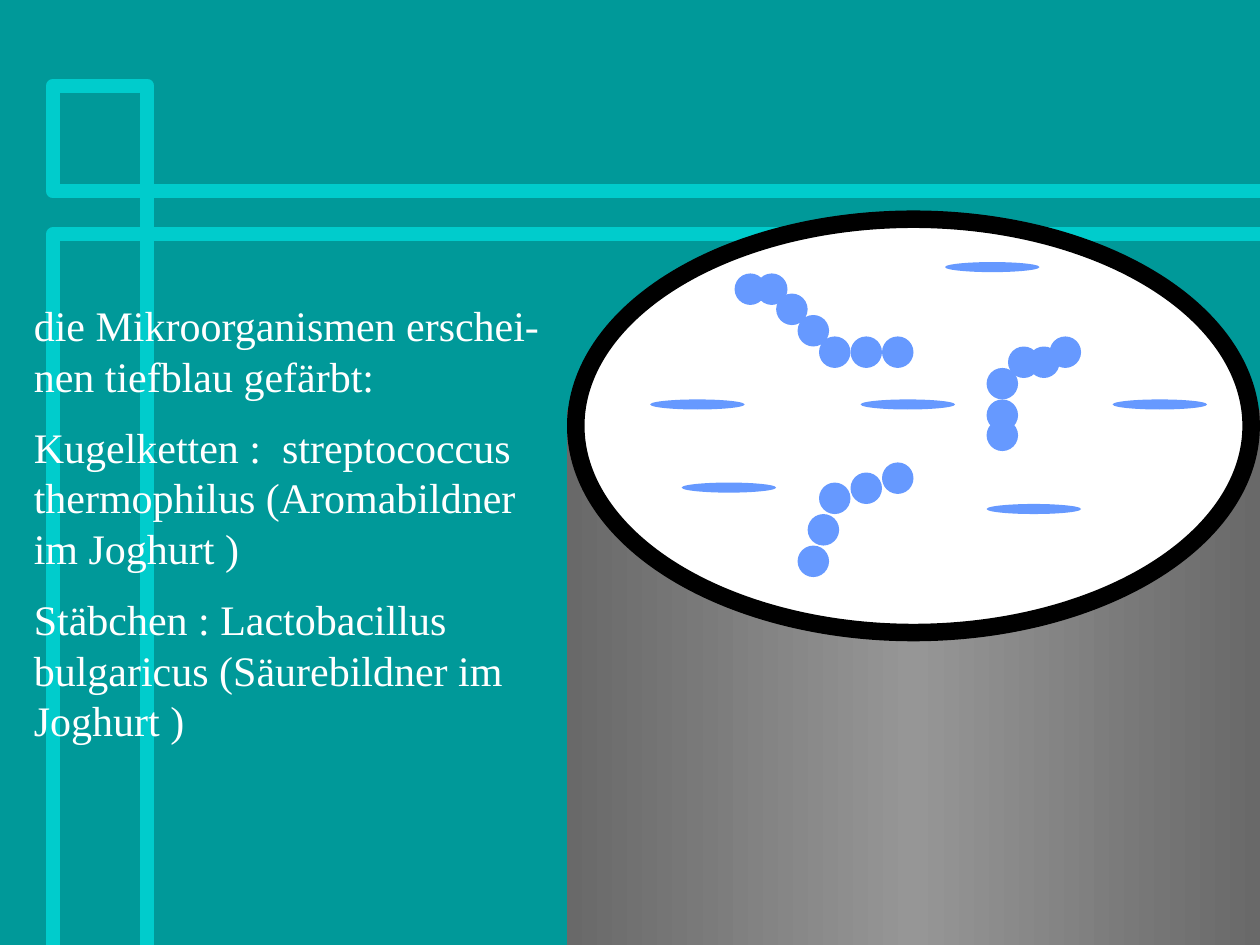
import copy

import pptx
import pptx.dml.color
import pptx.enum.shapes
import pptx.enum.text
import pptx.oxml
import pptx.util
from pptx.dml.color import RGBColor
from pptx.util import Inches

TEAL = RGBColor(0x00, 0x99, 0x99)
CYAN = RGBColor(0x00, 0xCC, 0xCC)
DARK_GREY = RGBColor(0x69, 0x69, 0x69)
LIGHT_GREY = RGBColor(0x96, 0x96, 0x96)
BLUE = RGBColor(0x66, 0x99, 0xFF)
WHITE = RGBColor(0xFF, 0xFF, 0xFF)
BLACK = RGBColor(0x00, 0x00, 0x00)

FRAME_LINES = [
    [(10, 1.86), (0.42, 1.86), (0.42, 7.5)],
    [(1.17, 7.5), (1.17, 0.68), (0.42, 0.68), (0.42, 1.52), (10, 1.52)],
]

# Left and top of each bacterium
COCCUS_CHAINS = [
    [(5.83, 2.17), (6, 2.17), (6.16, 2.33), (6.33, 2.5), (6.5, 2.67), (6.75, 2.67), (7, 2.67)],
    [(7.83, 3.33), (7.83, 3.17), (7.83, 2.92), (8, 2.75), (8.16, 2.75), (8.33, 2.67)],
    [(6.33, 4.33), (6.41, 4.08), (6.5, 3.83), (6.75, 3.75), (7, 3.67)],
]
RODS = [(5.16, 3.17), (7.5, 2.08), (7.83, 4), (5.41, 3.83), (6.83, 3.17), (8.83, 3.17)]

TEXT = [
    "die Mikroorganismen erschei-nen tiefblau gefärbt:",
    "Kugelketten :  streptococcus thermophilus (Aromabildner im Joghurt )",
    "Stäbchen : Lactobacillus bulgaricus (Säurebildner im Joghurt )",
]


def add_frame_line(page, points):
    start, *others = [(Inches(x), Inches(y)) for x, y in points]
    builder = page.shapes.build_freeform(*start)
    builder.add_line_segments(others, close=False)
    shape = builder.convert_to_shape()
    shape.shadow.inherit = False
    shape.fill.background()
    shape.line.color.rgb = CYAN
    shape.line.width = pptx.util.Pt(8)
    # Rounded corners
    line = shape.line._get_or_add_ln()
    line.append(pptx.oxml.parse_xml(
        '<a:round xmlns:a="http://schemas.openxmlformats.org/drawingml/2006/main"/>'))


def add_ellipse(shapes, left, top, width, height, color):
    shape = shapes.add_shape(pptx.enum.shapes.MSO_SHAPE.OVAL, Inches(left), Inches(top),
                             Inches(width), Inches(height))
    shape.shadow.inherit = False
    shape.fill.solid()
    shape.fill.fore_color.rgb = color
    shape.line.fill.background()
    return shape


def add_microscope_tube(page):
    tube = page.shapes.add_shape(pptx.enum.shapes.MSO_SHAPE.RECTANGLE, Inches(4.5), Inches(3.25),
                                 Inches(5.5), Inches(4.25))
    tube.shadow.inherit = False
    tube.line.fill.background()
    tube.fill.gradient()
    tube.fill.gradient_angle = 0
    # A third stop puts the light band in the middle
    stop_list = tube.fill._fill._gradFill.gsLst
    stop_list.insert(1, copy.deepcopy(stop_list[0]))
    colors = [DARK_GREY, LIGHT_GREY, DARK_GREY]
    for stop, position, color in zip(tube.fill.gradient_stops, (0, 0.5, 1), colors):
        stop.position = position
        stop.color.rgb = color

    lens = add_ellipse(page.shapes, 4.57, 1.74, 5.36, 3.28, WHITE)
    lens.line.color.rgb = BLACK
    lens.line.width = pptx.util.Pt(10)


def add_bacteria(page):
    group = page.shapes.add_group_shape()
    for chain in COCCUS_CHAINS:
        for left, top in chain:
            add_ellipse(group.shapes, left, top, 0.25, 0.25, BLUE)
    for left, top in RODS:
        add_ellipse(group.shapes, left, top, 0.75, 0.08, BLUE)


def add_description(page):
    box = page.shapes.add_textbox(Inches(0.17), Inches(2.33), Inches(4.25), Inches(3.69))
    frame = box.text_frame
    frame.word_wrap = True
    frame.auto_size = pptx.enum.text.MSO_AUTO_SIZE.SHAPE_TO_FIT_TEXT
    frame.text = "\n".join(TEXT)
    for para in frame.paragraphs:
        para.space_before = pptx.util.Pt(12)
        for span in para.runs:
            span.font.name = "Times New Roman"
            span.font.size = pptx.util.Pt(24)
            span.font.color.rgb = WHITE


def main():
    deck = pptx.Presentation()
    deck.slide_width, deck.slide_height = Inches(10), Inches(7.5)
    page = deck.slides.add_slide(deck.slide_layouts[6])
    page.background.fill.solid()
    page.background.fill.fore_color.rgb = TEAL

    for points in FRAME_LINES:
        add_frame_line(page, points)
    add_microscope_tube(page)
    add_bacteria(page)
    add_description(page)
    deck.save("out.pptx")


if __name__ == "__main__":
    main()
